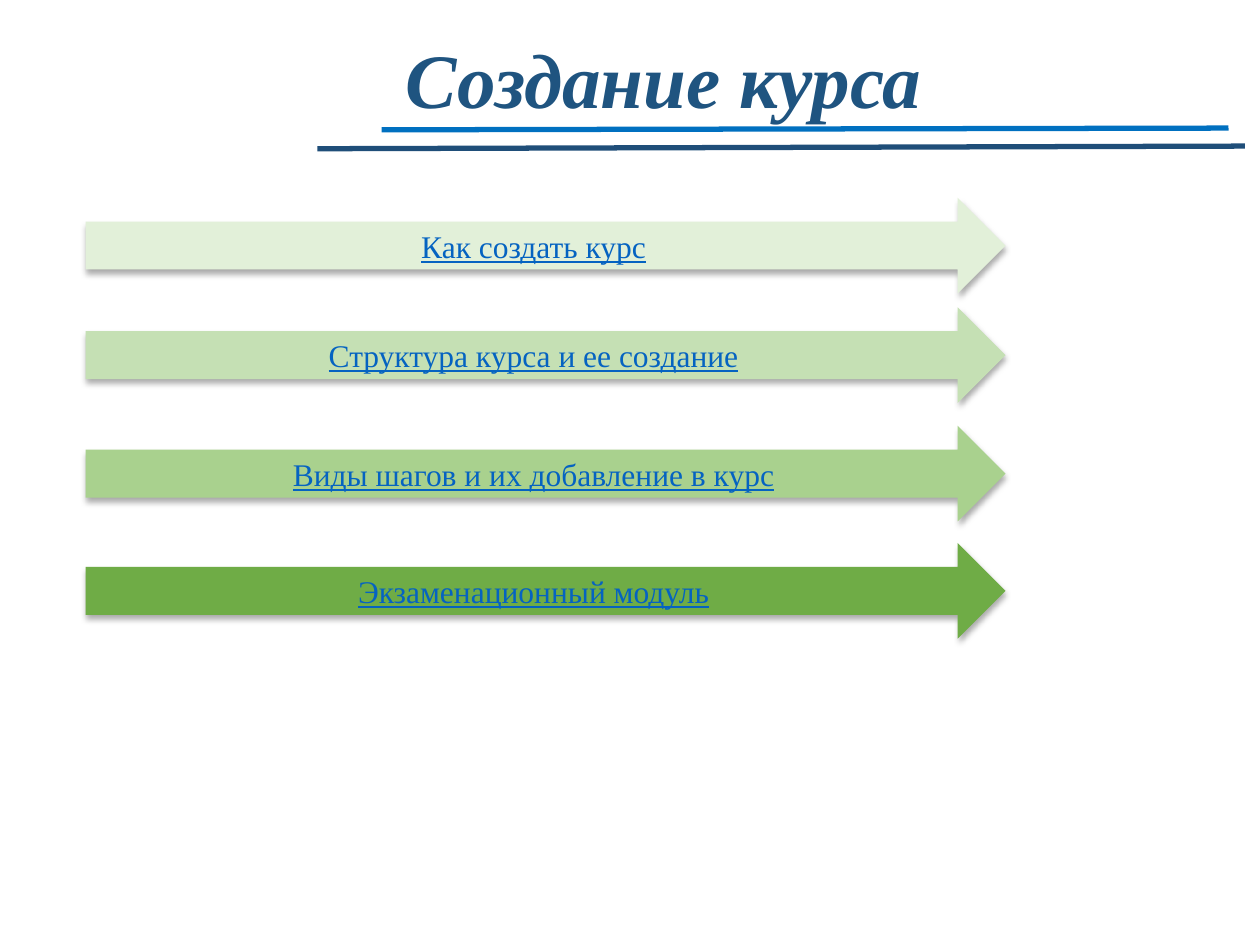
import pptx
import pptx.util
import pptx.dml.color
import pptx.enum.shapes
import pptx.enum.text
import pptx.oxml
import pptx.oxml.ns
from dataclasses import dataclass

Pt = pptx.util.Pt
ALIGN = pptx.enum.text.PP_ALIGN


@dataclass(frozen=True)
class Theme:
    font: str = "Times New Roman"
    title_size: float = 44
    topic_size: float = 18
    rule_width: float = 3
    background: str = "FFFFFF"
    title: str = "1F5480"
    topic: str = "0563C1"
    upper_rule: str = "0070C0"
    lower_rule: str = "1F4E79"
    arrows: tuple = ("E2F0D9", "C5E0B4", "A9D18E", "6FAC46")


THEME = Theme()
# Each topic with the top of its arrow inside the list
TOPICS = (
    ("Как создать курс", 0),
    ("Структура курса и ее создание", 62.6),
    ("Виды шагов и их добавление в курс", 130.3),
    ("Экзаменационный модуль", 197.3),
)
SHADOW = (
    '<a:outerShdw %s blurRad="%d" dist="%d" dir="5400000" algn="t" rotWithShape="0">'
    '<a:srgbClr val="000000"><a:alpha val="32000"/></a:srgbClr></a:outerShdw>'
    % (pptx.oxml.ns.nsdecls("a"), Pt(3.5), Pt(2.2))
)


def rgb(color):
    return pptx.dml.color.RGBColor.from_string(color)


def write(frame, text, *, size, color, align=ALIGN.LEFT, bold=False,
          italic=False, underline=False, spacing=None):
    frame.word_wrap = True
    frame.auto_size = pptx.enum.text.MSO_AUTO_SIZE.NONE
    frame.vertical_anchor = pptx.enum.text.MSO_ANCHOR.MIDDLE
    paragraph = frame.paragraphs[0]
    paragraph.alignment = align
    paragraph.line_spacing = spacing
    run = paragraph.add_run()
    run.text = text
    font = run.font
    font.name, font.size = THEME.font, Pt(size)
    font.bold, font.italic, font.underline = bold, italic, underline
    font.color.rgb = rgb(color)


def add_rule(slide, start, end, color):
    rule = slide.shapes.add_connector(
        pptx.enum.shapes.MSO_CONNECTOR.STRAIGHT, *map(Pt, start + end))
    rule.line.color.rgb = rgb(color)
    rule.line.width = Pt(THEME.rule_width)
    rule._element.spPr.append(pptx.oxml.parse_xml(
        "<a:effectLst %s/>" % pptx.oxml.ns.nsdecls("a")))


def add_header(slide, left, top, width, height):
    heading = slide.shapes.title
    heading.left, heading.top = Pt(left), Pt(top)
    heading.width, heading.height = Pt(width), Pt(height)
    write(heading.text_frame, "Создание курса", size=THEME.title_size,
          color=THEME.title, bold=True, italic=True, spacing=0.9)
    # Two slightly rising rules under the title
    right, bottom = left + width, top + height
    add_rule(slide, (left - 6.5, bottom - 8.6), (right - 18, bottom - 9.6),
             THEME.upper_rule)
    add_rule(slide, (left - 43.2, bottom + 2.2), (right - 8.6, bottom + 0.7),
             THEME.lower_rule)


def add_topic_arrow(slide, left, top, width, height, text, fill):
    arrow = slide.shapes.add_shape(
        pptx.enum.shapes.MSO_SHAPE.RIGHT_ARROW,
        Pt(left), Pt(top), Pt(width), Pt(height))
    arrow.fill.solid()
    arrow.fill.fore_color.rgb = rgb(fill)
    arrow.line.fill.background()
    # Soft shadow straight below the arrow
    arrow.shadow.inherit = False
    effects = arrow._element.spPr.find(pptx.oxml.ns.qn("a:effectLst"))
    effects.append(pptx.oxml.parse_xml(SHADOW))
    write(arrow.text_frame, text, size=THEME.topic_size, color=THEME.topic,
          align=ALIGN.CENTER, underline=True)


def add_topics(slide, left, top, width, arrow_height):
    for (text, offset), fill in zip(TOPICS, THEME.arrows):
        add_topic_arrow(slide, left, top + offset, width, arrow_height, text, fill)


def main():
    deck = pptx.Presentation()
    deck.slide_width, deck.slide_height = Pt(720), Pt(540)
    slide = deck.slides.add_slide(deck.slide_layouts[5])
    slide.background.fill.solid()
    slide.background.fill.fore_color.rgb = rgb(THEME.background)
    add_header(slide, 224.6, 12.2, 495.4, 70.6)
    add_topics(slide, 49, 113, 525.6, 54.7)
    deck.save("out.pptx")


if __name__ == "__main__":
    main()
